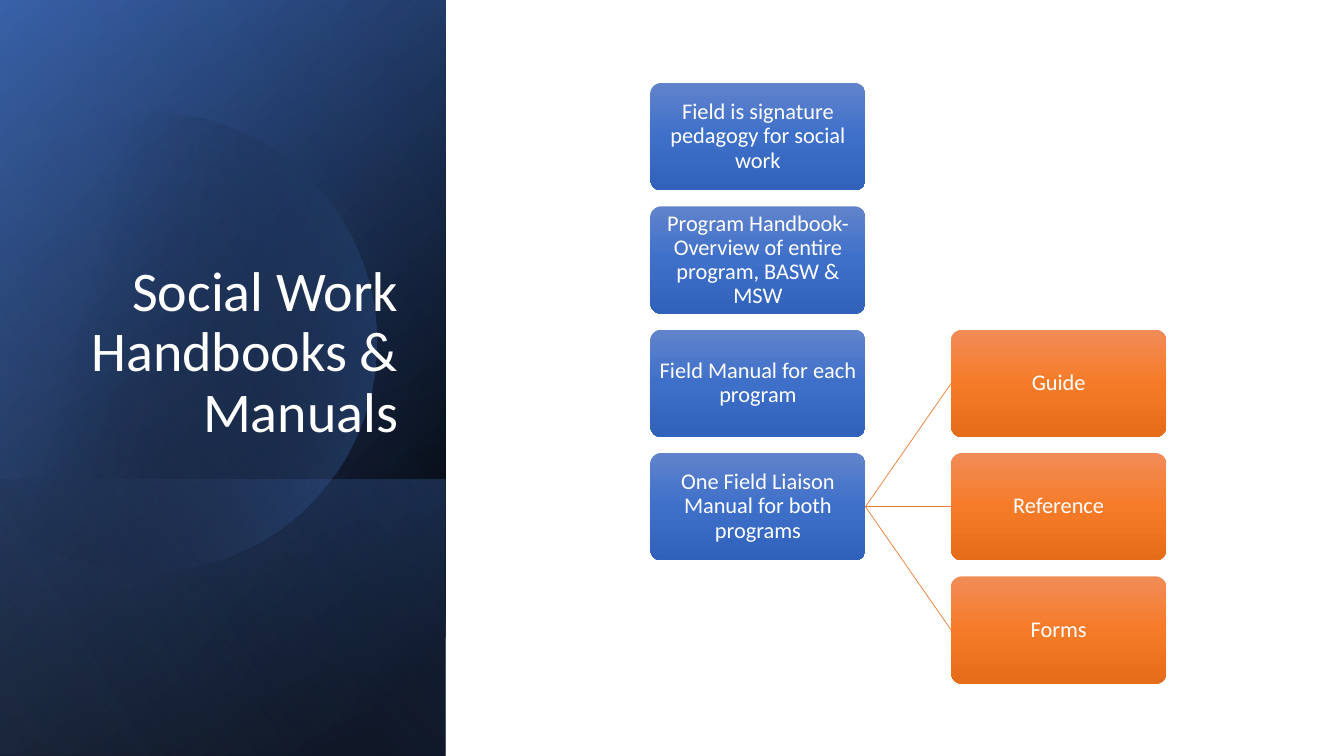
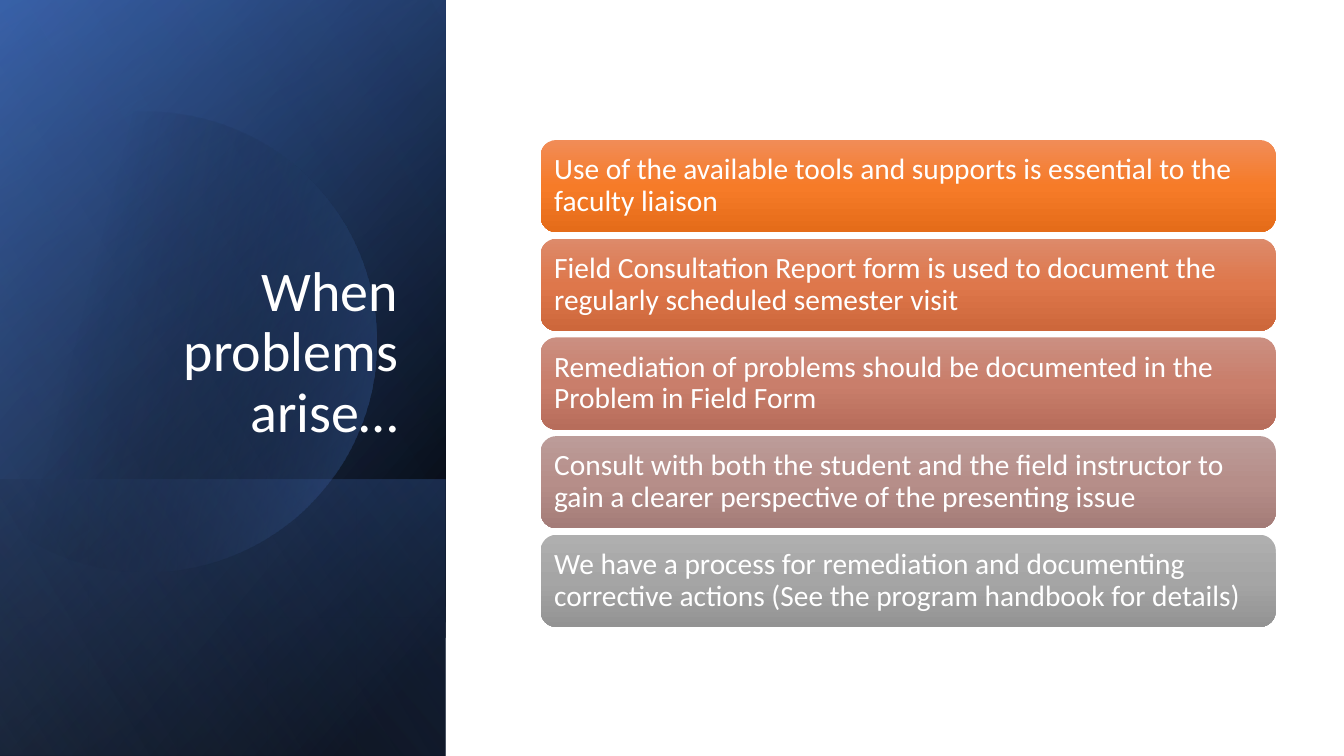
from dataclasses import dataclass
from math import acos, cos, sin
from typing import Any

from lxml import etree
from pptx import Presentation
from pptx.dml.color import RGBColor
from pptx.enum import shapes, text
from pptx.oxml.ns import qn
from pptx.util import Pt

FONT = "Calibri"
COLORS = {
    "white": "FFFFFF", "black": "000000", "navy": "2F5597",
    "blue": "4472C4", "pale_blue": "8FAADC", "orange": "ED7D31",
}
# Top, middle and bottom colour of each glossy box
GLOSS = {
    "blue": ("6183CB", "3E70CA", "3062BB"),
    "orange": ("F18C57", "F67B28", "E56C19"),
    "copper": ("DD8A6A", "DE774B", "CD673B"),
    "rose": ("CB8F81", "C97E6B", "B76D5B"),
    "mauve": ("BC9C99", "B68E89", "A47C78"),
    "grey": ("AFAFAF", "A5A5A5", "939393"),
}


@dataclass(frozen=True)
class Stop:
    pos: int
    color: str
    alpha: int = 100


@dataclass(frozen=True)
class Panel:
    """A side panel layer, as seen on the slide, flush with the left edge."""
    top: float
    height: float
    angle: int
    stops: tuple[Stop, ...]


@dataclass(frozen=True)
class BoxStyle:
    width: float
    height: float
    pitch: float
    corner: float
    inset: float
    size: float
    align: Any


SIDE_W, SLIDE_W, SLIDE_H = 318.4, 960, 540
BAND_TOP = 342.8
C = COLORS
BACK_PANELS = (
    Panel(0, SLIDE_H, 50, (Stop(8, C["black"]), Stop(100, C["navy"]))),
    Panel(0, SLIDE_H, 30, (Stop(0, C["black"], 0), Stop(99, C["blue"], 46))),
    Panel(BAND_TOP, SLIDE_H - BAND_TOP, 130,
          (Stop(2, C["blue"], 29), Stop(100, C["black"], 30))),
)
SHEEN = Panel(0, SLIDE_H, 120,
              (Stop(0, C["black"], 0), Stop(99, C["pale_blue"], 11)))
DISC_STOPS = (Stop(29, C["black"], 0), Stop(100, C["blue"], 43))

TREE = BoxStyle(153.6, 76.7, 88.1, 0.1, 1, 16, text.PP_ALIGN.CENTER)
BAR = BoxStyle(525, 65.8, 70.5, 0.17, 6.4, 21, text.PP_ALIGN.LEFT)


def set_all(obj: Any, **values: Any) -> None:
    for name, value in values.items():
        setattr(obj, name, value)


def fill_gradient(sp: Any, stops: tuple[Stop, ...], angle: int) -> None:
    """Fill with any number of stops; angle is clockwise in degrees."""
    sp.shadow.inherit = False
    sp.line.fill.background()
    sp.fill.gradient()
    grad = sp._element.spPr.find(qn("a:gradFill"))
    gs_list = grad.find(qn("a:gsLst"))
    for old in list(gs_list):
        gs_list.remove(old)
    for stop in stops:
        gs = etree.SubElement(gs_list, qn("a:gs"), pos=str(stop.pos * 1000))
        clr = etree.SubElement(gs, qn("a:srgbClr"), val=stop.color)
        if stop.alpha < 100:
            etree.SubElement(clr, qn("a:alpha"), val=str(stop.alpha * 1000))
    grad.find(qn("a:lin")).set("ang", str(angle * 60000))


def write(sp: Any, words: str, size: float, align: Any, **frame: Any) -> None:
    tf = sp.text_frame
    set_all(tf, word_wrap=True, auto_size=text.MSO_AUTO_SIZE.NONE, **frame)
    p = tf.paragraphs[0]
    set_all(p, alignment=align, line_spacing=0.9)
    r = p.add_run()
    r.text = words
    set_all(r.font, name=FONT, size=Pt(size))
    r.font.color.rgb = RGBColor.from_string(COLORS["white"])


def add_panel(s: Any, panel: Panel) -> None:
    # Turned a quarter and mirrored, so width and height swap about the centre
    shift = (SIDE_W - panel.height) / 2
    sp = s.shapes.add_shape(shapes.MSO_SHAPE.RECTANGLE, Pt(shift), Pt(panel.top - shift),
                            Pt(panel.height), Pt(SIDE_W))
    sp.rotation = 90
    sp._element.spPr.xfrm.set("flipH", "1")
    fill_gradient(sp, panel.stops, panel.angle)


def add_disc(s: Any) -> None:
    """A circle cut off by a vertical chord just past the slide edge."""
    cx, cy, radius, chord, steps = 104.6, 244, 164.5, -11, 120
    half = acos((chord - cx) / radius)
    angles = [half * (2 * i / steps - 1) for i in range(steps + 1)]
    points = [(Pt(cx + radius * cos(a)), Pt(cy + radius * sin(a))) for a in angles]
    builder = s.shapes.build_freeform(*points[0])
    builder.add_line_segments(points[1:], close=True)
    fill_gradient(builder.convert_to_shape(), DISC_STOPS, 14)


def add_titled_slide(prs: Any, title: str) -> Any:
    s = prs.slides.add_slide(prs.slide_layouts[5])
    for panel in BACK_PANELS:
        add_panel(s, panel)
    add_disc(s)
    add_panel(s, SHEEN)
    # Title, raised above the panel
    sp = s.shapes.title
    sp._element.getparent().append(sp._element)
    set_all(sp, left=Pt(46), top=Pt(132.5), width=Pt(245.5), height=Pt(188.6))
    write(sp, title, 40, text.PP_ALIGN.RIGHT, vertical_anchor=text.MSO_ANCHOR.BOTTOM)
    return s


def add_column(s: Any, style: BoxStyle, left: float, top: float,
               items: list[tuple[str, str]]) -> list[Any]:
    """Stack glossy boxes from (text, gloss name) pairs."""
    boxes = []
    for i, (words, gloss) in enumerate(items):
        sp = s.shapes.add_shape(shapes.MSO_SHAPE.ROUNDED_RECTANGLE, Pt(left),
                                Pt(top + i * style.pitch), Pt(style.width), Pt(style.height))
        sp.adjustments[0] = style.corner
        stops = tuple(Stop(50 * n, color) for n, color in enumerate(GLOSS[gloss]))
        fill_gradient(sp, stops, 90)
        margins = {f"margin_{side}": Pt(style.inset)
                   for side in ("left", "top", "right", "bottom")}
        write(sp, words, style.size, style.align,
              vertical_anchor=text.MSO_ANCHOR.MIDDLE, **margins)
        boxes.append(sp)
    return boxes


def join(s: Any, start: Any, end: Any) -> None:
    line = s.shapes.add_connector(shapes.MSO_CONNECTOR.STRAIGHT, 0, 0, 0, 0)
    line.begin_connect(start, 3)
    line.end_connect(end, 1)
    line.line.width = Pt(0.5)
    line.line.color.rgb = RGBColor.from_string(COLORS["orange"])
    etree.SubElement(line._element.spPr, qn("a:effectLst"))


def build_handbooks(prs: Any) -> None:
    s = add_titled_slide(prs, "Social Work Handbooks & Manuals")
    top = 59.3
    manuals = add_column(s, TREE, 464.6, top, [(words, "blue") for words in (
        "Field is signature pedagogy for social work",
        "Program Handbook- Overview of entire program, BASW & MSW",
        "Field Manual for each program",
        "One Field Liaison Manual for both programs",
    )])
    # Branches start level with the third manual
    parts = add_column(s, TREE, 679.4, top + 2 * TREE.pitch,
                       [(words, "orange") for words in ("Guide", "Reference", "Forms")])
    for part in parts:
        join(s, manuals[-1], part)


def build_problems(prs: Any) -> None:
    s = add_titled_slide(prs, "When problems arise…")
    add_column(s, BAR, 386.2, 100, [
        ("Use of the available tools and supports is essential to the faculty liaison",
         "orange"),
        ("Field Consultation Report form is used to document the regularly scheduled "
         "semester visit", "copper"),
        ("Remediation of problems should be documented in the Problem in Field Form",
         "rose"),
        ("Consult with both the student and the field instructor to gain a clearer "
         "perspective of the presenting issue", "mauve"),
        ("We have a process for remediation and documenting corrective actions "
         "(See the program handbook for details)", "grey"),
    ])


def main() -> None:
    prs = Presentation()
    set_all(prs, slide_width=Pt(SLIDE_W), slide_height=Pt(SLIDE_H))
    build_handbooks(prs)
    build_problems(prs)
    prs.save("out.pptx")


if __name__ == "__main__":
    main()
